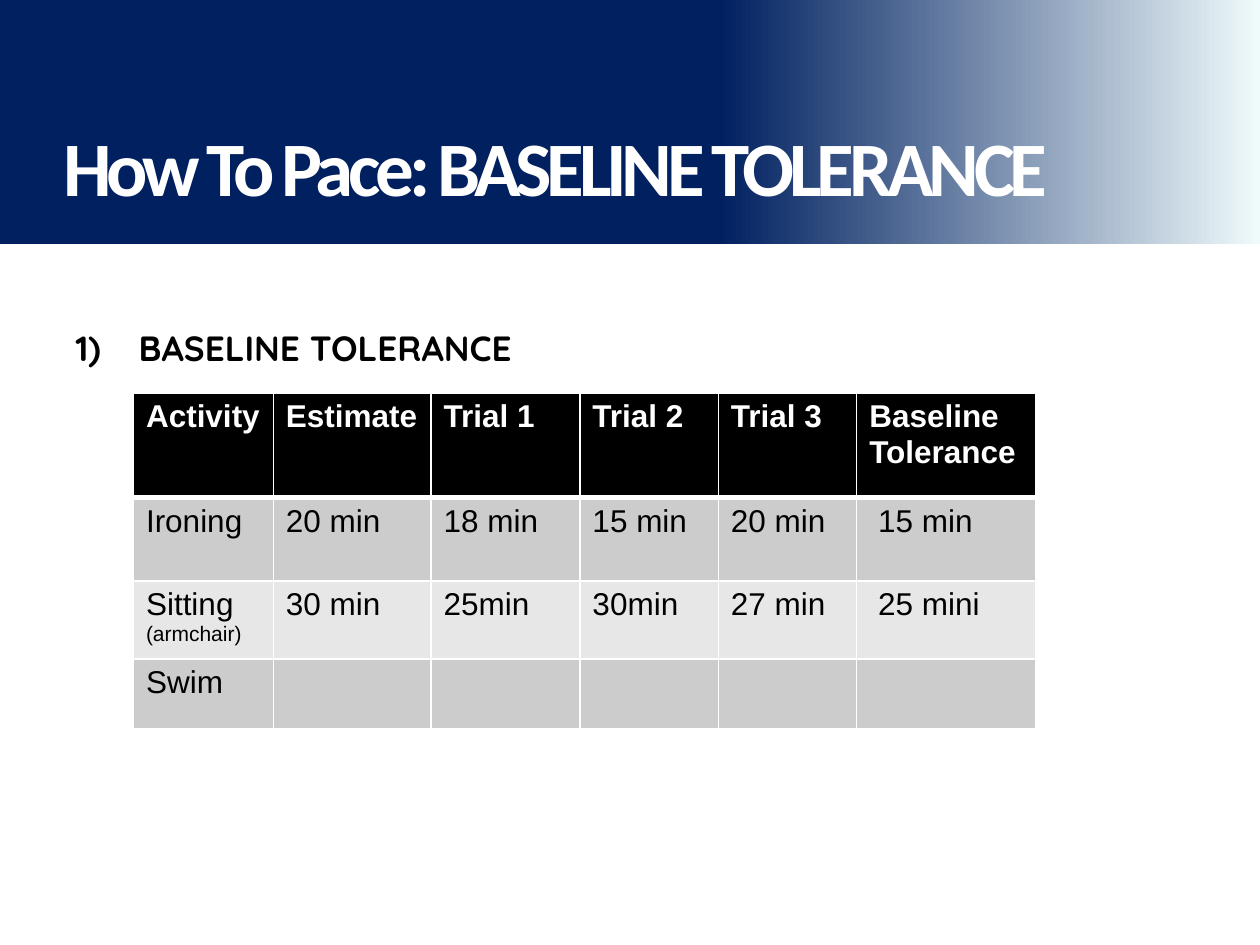
from copy import deepcopy

from pptx import Presentation
from pptx.dml.color import RGBColor
from pptx.enum.shapes import MSO_SHAPE
from pptx.enum.text import MSO_ANCHOR, MSO_AUTO_SIZE, PP_ALIGN
from pptx.oxml.ns import qn
from pptx.util import Cm, Pt
from lxml import etree

RECT = MSO_SHAPE.RECTANGLE
MIDDLE, TOP = MSO_ANCHOR.MIDDLE, MSO_ANCHOR.TOP
NO_AUTOFIT = MSO_AUTO_SIZE.NONE
LEFT = PP_ALIGN.LEFT

COLORS = {
    "navy": "002060",
    "ice": "EFFAFB",
    "white": "FFFFFF",
    "black": "000000",
    "band": "CCCCCC",
    "light band": "E7E7E7",
}

COLUMN_WIDTHS = [2.82, 3.18, 3, 2.79, 2.79, 3.61]
ROW_HEIGHTS = [2.11, 1.68, 1.57, 1.42]
ROWS = [
    ["Activity", "Estimate", "Trial 1", "Trial 2", "Trial 3", "Baseline\nTolerance"],
    ["Ironing", "20 min", "18 min", "15 min", "20 min", " 15 min"],
    ["Sitting\n(armchair)", "30 min", "25min", "30min", "27 min", " 25 mini"],
    ["Swim", "", "", "", "", ""],
]


def rgb(name):
    return RGBColor.from_string(COLORS[name])


def add_run(p, text, size, font, color, bold=False):
    r = p.add_run()
    r.text = text
    r.font.size = Pt(size)
    r.font.name = font
    r.font.bold = bold
    r.font.color.rgb = rgb(color)
    return r


def place(sp, left, top, width, height):
    sp.left, sp.top, sp.width, sp.height = Cm(left), Cm(top), Cm(width), Cm(height)


def add_banner(s, width):
    """Add the gradient band behind the title."""
    sp = s.shapes.add_shape(RECT, 0, 0, width, Cm(4.92))
    sp.shadow.inherit = False
    sp.line.fill.background()
    sp.fill.gradient()
    sp.fill.gradient_angle = 0
    stops = sp.element.spPr.find(".//" + qn("a:gsLst"))
    stops.append(deepcopy(stops[-1]))
    values = [(0, "navy"), (0.57, "navy"), (1, "ice")]
    for stop, (position, color) in zip(sp.fill.gradient_stops, values):
        stop.position = position
        stop.color.rgb = rgb(color)
    s.shapes.title.element.addprevious(sp.element)


def fill_title(sp):
    place(sp, 1.02, 1.75, 23.09, 3.18)
    tf = sp.text_frame
    tf.auto_size = NO_AUTOFIT
    tf.vertical_anchor = MIDDLE
    p = tf.paragraphs[0]
    p.alignment = LEFT
    r = add_run(p, "How To Pace: BASELINE TOLERANCE", 44, "Calibri", "white", True)
    r.font.size = Pt(44)
    r.font._element.set("spc", "-300")


def fill_body(sp):
    place(sp, 1.27, 5.54, 22.86, 10)
    tf = sp.text_frame
    tf.auto_size = NO_AUTOFIT
    tf.vertical_anchor = TOP
    tf.margin_top = Cm(1.04)
    p = tf.paragraphs[0]
    p.space_before = Pt(0)
    pPr = p._p.get_or_add_pPr()
    pPr.set("marL", str(Cm(1.27)))
    pPr.set("indent", str(-Cm(1.27)))
    etree.SubElement(pPr, qn("a:buFont"), typeface="+mj-lt")
    etree.SubElement(pPr, qn("a:buAutoNum"), type="arabicParenR")
    add_run(p, "BASELINE TOLERANCE", 20, "Quicksand", "black", True)


def set_border(cell, side, width):
    ln = etree.SubElement(cell._tc.get_or_add_tcPr(), qn("a:ln" + side), w=str(Pt(width)))
    fill = etree.SubElement(ln, qn("a:solidFill"))
    etree.SubElement(fill, qn("a:srgbClr"), val=COLORS["white"])


def fill_cell(cell, text, row):
    header = row == 0
    widths = {"L": 1, "R": 1, "T": 3 if row == 1 else 1, "B": 3 if header else 1}
    for side, width in widths.items():
        set_border(cell, side, width)
    cell.fill.solid()
    cell.fill.fore_color.rgb = rgb("black" if header else "band" if row % 2 else "light band")
    if not text:
        return
    tf = cell.text_frame
    for i, line in enumerate(text.split("\n")):
        p = tf.add_paragraph() if i else tf.paragraphs[0]
        size = 12 if line.startswith("(") else 18
        add_run(p, line, size, "Arial", "white" if header else "black", header)


def add_trials_table(s):
    frame = s.shapes.add_table(
        len(ROWS), len(COLUMN_WIDTHS), Cm(2.69), Cm(7.92),
        Cm(sum(COLUMN_WIDTHS)), Cm(sum(ROW_HEIGHTS)))
    table = frame.table
    for column, width in zip(table.columns, COLUMN_WIDTHS):
        column.width = Cm(width)
    for i, (row, height) in enumerate(zip(table.rows, ROW_HEIGHTS)):
        row.height = Cm(height)
        for cell, text in zip(row.cells, ROWS[i]):
            fill_cell(cell, text, i)


def main():
    prs = Presentation()
    prs.slide_width, prs.slide_height = Cm(25.4), Cm(19.05)
    s = prs.slides.add_slide(prs.slide_layouts[1])
    add_banner(s, prs.slide_width)
    fill_title(s.shapes.title)
    fill_body(s.placeholders[1])
    add_trials_table(s)
    prs.save("out.pptx")


if __name__ == "__main__":
    main()
